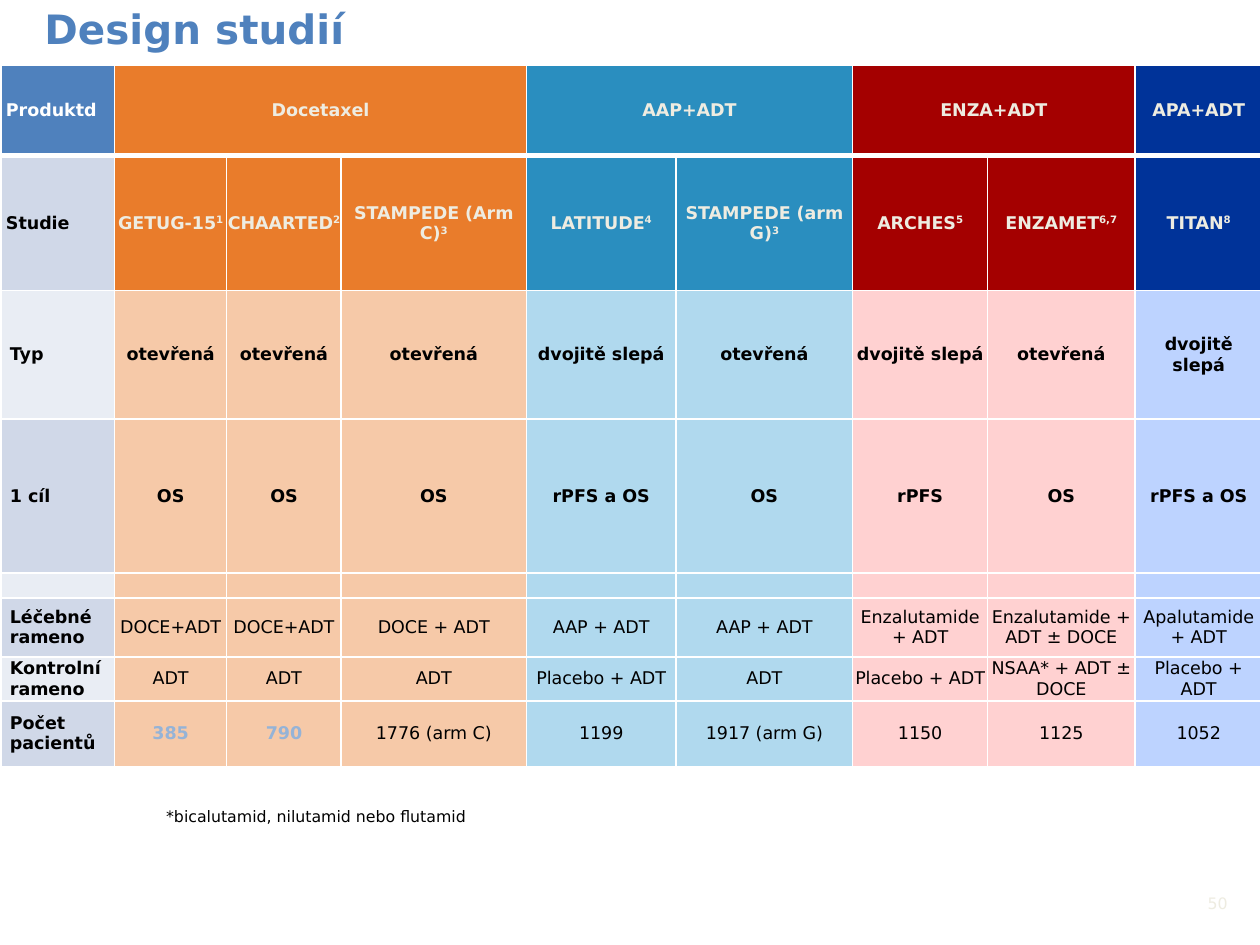
from pptx import Presentation
from pptx.dml.color import RGBColor
from pptx.enum.text import MSO_ANCHOR, MSO_AUTO_SIZE, PP_ALIGN
from pptx.oxml.ns import qn
from pptx.util import Cm, Pt
from lxml import etree

LEFT, CENTER, RIGHT = PP_ALIGN.LEFT, PP_ALIGN.CENTER, PP_ALIGN.RIGHT
MIDDLE, TOP = MSO_ANCHOR.MIDDLE, MSO_ANCHOR.TOP

THEME = {
    "font": "DejaVu Sans",
    "title_size": 23.1, "table_size": 10, "note_size": 9,
    "accent": "4F81BD", "muted": "95B3D7", "pale": "EEECE1",
    "white": "FFFFFF", "black": "000000",
    "bands": ("E9EDF4", "D0D8E8"),
}

TITLE = "Design studií"
FOOTNOTE = "*bicalutamid, nilutamid nebo flutamid"
PAGE = "50"

PRODUCTS = [
    ("Docetaxel", 3, "E97C2B", "F6C9A8"),
    ("AAP+ADT", 2, "2A8EBF", "B0D9EE"),
    ("ENZA+ADT", 2, "A40000", "FFD1D1"),
    ("APA+ADT", 1, "003399", "BDD3FF"),
]
STUDIES = ["GETUG-15^1", "CHAARTED^2", "STAMPEDE (Arm C)^3", "LATITUDE^4",
           "STAMPEDE (arm G)^3", "ARCHES^5", "ENZAMET^6,7", "TITAN^8"]
DETAILS = [
    ("Typ", True, ["otevřená", "otevřená", "otevřená", "dvojitě slepá",
                   "otevřená", "dvojitě slepá", "otevřená", "dvojitě\nslepá"]),
    ("1 cíl", True, ["OS", "OS", "OS", "rPFS a OS", "OS", "rPFS", "OS", "rPFS a OS"]),
    ("", False, [""] * 8),
    ("Léčebné rameno", False,
     ["DOCE+ADT", "DOCE+ADT", "DOCE + ADT", "AAP + ADT", "AAP + ADT",
      "Enzalutamide + ADT", "Enzalutamide + ADT ± DOCE", "Apalutamide + ADT"]),
    ("Kontrolní rameno", False,
     ["ADT", "ADT", "ADT", "Placebo + ADT", "ADT", "Placebo + ADT",
      "NSAA* + ADT ± DOCE", "Placebo + ADT"]),
    ("Počet\npacientů", False,
     ["385", "790", "1776 (arm C)", "1199", "1917 (arm G)", "1150", "1125", "1052"]),
]
HIGHLIGHTED = ("385", "790")

COL_WIDTHS = [2.29, 2.26, 2.31, 3.73, 3.02, 3.56, 2.72, 2.97, 2.57]
ROW_HEIGHTS = [1.83, 2.72, 2.59, 3.1, 0.5, 1.19, 0.89, 1.32]


def write(tf, text, size=THEME["table_size"], color="black", bold=False, align=LEFT):
    for i, line in enumerate(text.split("\n")):
        p = tf.paragraphs[0] if i == 0 else tf.add_paragraph()
        p.alignment = align
        if not line:
            etree.SubElement(p._p, qn("a:endParaRPr"), sz=str(int(size * 100)))
            continue
        for j, part in enumerate(line.split("^")):
            r = p.add_run()
            r.text = part
            r.font.name = THEME["font"]
            r.font.size = Pt(size)
            r.font.bold = bold
            r.font.color.rgb = RGBColor.from_string(THEME[color])
            if j:
                r._r.get_or_add_rPr().set("baseline", "30000")


def style_cell(cell, fill, inset=0, bottom=1):
    cell.vertical_anchor = MIDDLE
    cell.margin_left = cell.margin_right = Cm(inset)
    cell.margin_top = cell.margin_bottom = 0
    tcPr = cell._tc.get_or_add_tcPr()
    for side, width in (("L", 1), ("R", 1), ("T", 1), ("B", bottom)):
        ln = etree.SubElement(tcPr, qn(f"a:ln{side}"), w=str(Pt(width)))
        solid = etree.SubElement(ln, qn("a:solidFill"))
        etree.SubElement(solid, qn("a:srgbClr"), val=THEME["white"])
    cell.fill.solid()
    cell.fill.fore_color.rgb = RGBColor.from_string(fill)


def add_text(s, text, left, top, width, height, anchor=TOP, **fmt):
    tf = s.shapes.add_textbox(Cm(left), Cm(top), Cm(width), Cm(height)).text_frame
    tf.word_wrap = True
    tf.vertical_anchor = anchor
    write(tf, text, **fmt)


def add_title(s):
    sp = s.shapes.title
    sp.left, sp.top, sp.width, sp.height = Cm(0.64), Cm(0.03), Cm(17.17), Cm(1.09)
    tf = sp.text_frame
    tf.auto_size = MSO_AUTO_SIZE.NONE
    tf.vertical_anchor = MIDDLE
    write(tf, TITLE, size=THEME["title_size"], color="accent", bold=True)


def add_study_table(s):
    table = s.shapes.add_table(
        len(ROW_HEIGHTS), len(COL_WIDTHS), Cm(0.02), Cm(1.31),
        Cm(sum(COL_WIDTHS)), Cm(sum(ROW_HEIGHTS))).table
    for col, width in zip(table.columns, COL_WIDTHS):
        col.width = Cm(width)
    for row, height in zip(table.rows, ROW_HEIGHTS):
        row.height = Cm(height)

    darks = [dark for _, span, dark, _ in PRODUCTS for _ in range(span)]
    lights = [light for *_, span, _, light in PRODUCTS for _ in range(span)]

    for c, fill in enumerate([THEME["accent"]] + darks):
        style_cell(table.cell(0, c), fill, 0 if c else 0.1, bottom=3)
    write(table.cell(0, 0).text_frame, "Produktd", color="white", bold=True)
    c = 1
    for name, span, *_ in PRODUCTS:
        cell = table.cell(0, c)
        if span > 1:
            cell.merge(table.cell(0, c + span - 1))
        write(cell.text_frame, name, color="pale", bold=True, align=CENTER)
        c += span

    for r, (label, bold, values) in enumerate([("Studie", True, STUDIES)] + DETAILS, 1):
        head = table.cell(r, 0)
        style_cell(head, THEME["bands"][r % 2], 0.1 if r == 1 else 0.18)
        write(head.text_frame, label, bold=True)
        for c, (value, fill) in enumerate(zip(values, darks if r == 1 else lights), 1):
            cell = table.cell(r, c)
            style_cell(cell, fill)
            marked = value in HIGHLIGHTED
            color = "pale" if r == 1 else "muted" if marked else "black"
            write(cell.text_frame, value, color=color, bold=bold or marked, align=CENTER)


def main():
    prs = Presentation()
    prs.slide_width, prs.slide_height = Cm(25.4), Cm(19.05)
    s = prs.slides.add_slide(prs.slide_layouts[5])
    add_title(s)
    add_text(s, FOOTNOTE, 3.1, 16.13, 22, 0.64, size=THEME["note_size"])
    add_study_table(s)
    add_text(s, PAGE, 22, 17.7, 3, 1, anchor=MIDDLE,
             size=THEME["note_size"], color="pale", align=RIGHT)
    prs.save("out.pptx")


if __name__ == "__main__":
    main()
